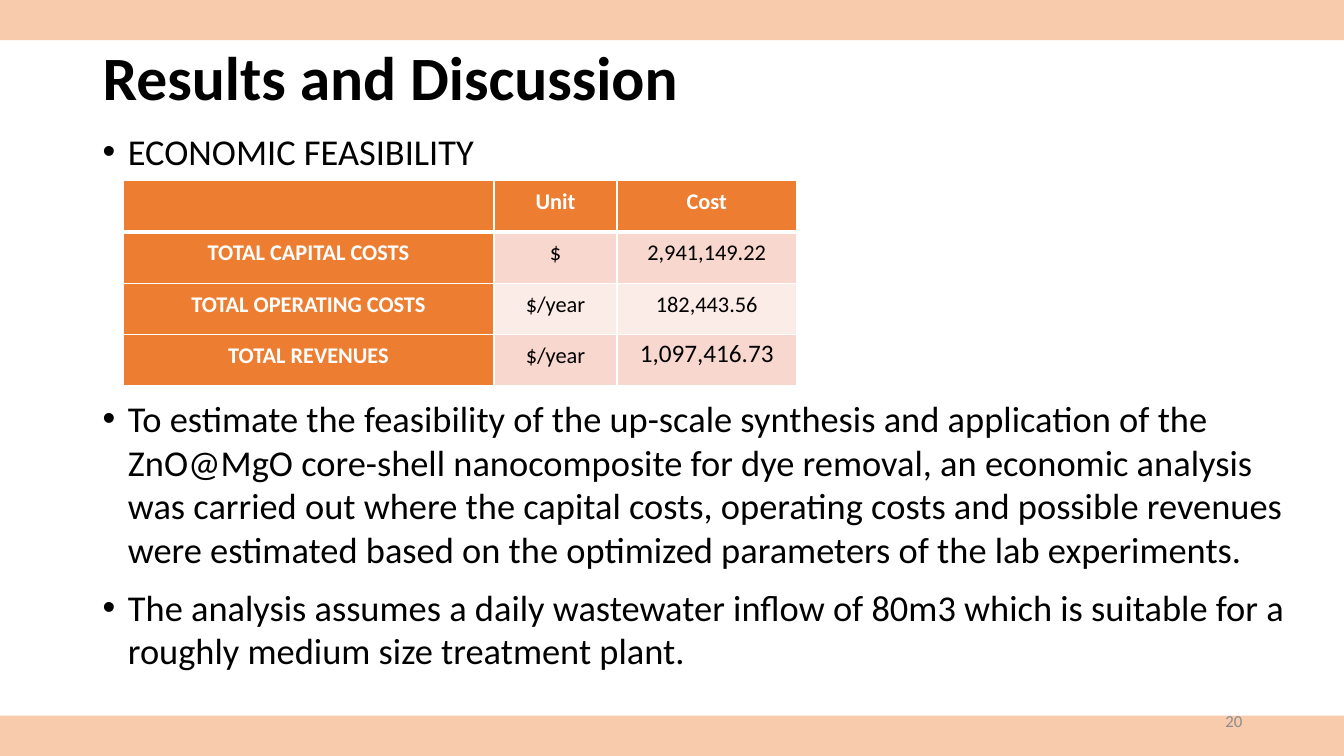
from lxml.etree import SubElement
from pptx import Presentation
from pptx.dml.color import RGBColor
from pptx.enum.shapes import MSO_SHAPE
from pptx.enum.text import MSO_ANCHOR, PP_ALIGN
from pptx.oxml.ns import qn
from pptx.util import Inches, Pt

BLACK = RGBColor(0x00, 0x00, 0x00)
WHITE = RGBColor(0xFF, 0xFF, 0xFF)
GREY = RGBColor(0x8C, 0x8C, 0x8C)
PEACH = RGBColor(0xF8, 0xCB, 0xAD)
ORANGE = RGBColor(0xED, 0x7D, 0x31)
ROW_TINTS = [RGBColor(0xF8, 0xD7, 0xCE), RGBColor(0xFC, 0xEC, 0xE8)]

COSTS = [
    ["", "Unit", "Cost"],
    ["TOTAL CAPITAL COSTS", "$", "2,941,149.22"],
    ["TOTAL OPERATING COSTS", "$/year", "182,443.56"],
    ["TOTAL REVENUES", "$/year", "1,097,416.73"],
]
COLUMN_WIDTHS = [3.68, 1.22, 1.78]
ROW_HEIGHT = 0.51
REVENUE_CELL = (3, 2)

FINDINGS = [
    "To estimate the feasibility of the up-scale synthesis and application of the "
    "ZnO@MgO core-shell nanocomposite for dye removal, an economic analysis was "
    "carried out where the capital costs, operating costs and possible revenues "
    "were estimated based on the optimized parameters of the lab experiments.",
    "The analysis assumes a daily wastewater inflow of 80m3 which is suitable for "
    "a roughly medium size treatment plant.",
]


def set_attributes(target, values):
    for name, value in values.items():
        setattr(target, name, value)


def write_text(paragraph, text, size, color=BLACK, bold=False, **layout):
    set_attributes(paragraph, layout)
    set_attributes(paragraph.font, {"name": "Calibri", "size": Pt(size), "bold": bold})
    paragraph.font.color.rgb = color
    if text:
        run = paragraph.add_run()
        run.text = text
        set_attributes(run.font, {"name": "Calibri", "size": Pt(size), "bold": bold})
        run.font.color.rgb = color


def add_band(slide, top):
    band = slide.shapes.add_shape(
        MSO_SHAPE.RECTANGLE, 0, Inches(top), Inches(13.33), Inches(0.4))
    band.shadow.inherit = False
    band.fill.solid()
    band.fill.fore_color.rgb = PEACH
    band.line.fill.background()


def add_text_frame(slide, left, top, width, height, anchor):
    box = slide.shapes.add_textbox(
        Inches(left), Inches(top), Inches(width), Inches(height))
    set_attributes(box.text_frame, {"word_wrap": True, "vertical_anchor": anchor})
    return box.text_frame


def add_bullets(slide, left, top, width, height, texts):
    frame = add_text_frame(slide, left, top, width, height, MSO_ANCHOR.TOP)
    for index, text in enumerate(texts):
        paragraph = frame.add_paragraph() if index else frame.paragraphs[0]
        write_text(paragraph, text, 26, space_before=Pt(10))
        properties = paragraph._p.get_or_add_pPr()
        properties.set("marL", str(Inches(0.25)))
        properties.set("indent", str(Inches(-0.25)))
        SubElement(properties, qn("a:buFont"), typeface="Arial")
        SubElement(properties, qn("a:buChar"), char="•")


def set_borders(cell, widths):
    properties = cell._tc.get_or_add_tcPr()
    for side, width in widths.items():
        line = SubElement(properties, qn(f"a:ln{side}"), w=str(Pt(width)))
        fill = SubElement(line, qn("a:solidFill"))
        SubElement(fill, qn("a:srgbClr"), val=str(WHITE))


def format_cell(cell, row, column, text):
    heading = row == 0 or column == 0
    # The rule under the header row is thicker
    set_borders(cell, {"L": 1, "R": 1, "T": 3 if row == 1 else 1,
                       "B": 3 if row == 0 else 1})
    cell.fill.solid()
    cell.fill.fore_color.rgb = ORANGE if heading else ROW_TINTS[(row - 1) % 2]
    set_attributes(cell, {
        "vertical_anchor": MSO_ANCHOR.MIDDLE,
        "margin_left": Inches(0.06), "margin_right": Inches(0.06),
        "margin_top": 0, "margin_bottom": 0,
    })
    write_text(cell.text_frame.paragraphs[0], text,
               18 if (row, column) == REVENUE_CELL else 16,
               WHITE if heading else BLACK, heading,
               alignment=PP_ALIGN.CENTER, line_spacing=Pt(13))


def add_cost_table(slide, left, top):
    table = slide.shapes.add_table(
        len(COSTS), len(COLUMN_WIDTHS), Inches(left), Inches(top),
        Inches(sum(COLUMN_WIDTHS)), Inches(ROW_HEIGHT * len(COSTS))).table
    for column, width in zip(table.columns, COLUMN_WIDTHS):
        column.width = Inches(width)
    for row, texts in enumerate(COSTS):
        table.rows[row].height = Inches(ROW_HEIGHT)
        for column, text in enumerate(texts):
            format_cell(table.cell(row, column), row, column, text)


def main():
    presentation = Presentation()
    presentation.slide_width = Inches(13.33)
    presentation.slide_height = Inches(7.5)
    slide = presentation.slides.add_slide(presentation.slide_layouts[6])

    # Title
    title = add_text_frame(slide, 0.92, 0.34, 11.5, 0.92, MSO_ANCHOR.MIDDLE)
    write_text(title.paragraphs[0], "Results and Discussion", 44, bold=True,
               line_spacing=0.9)

    # Bands and slide number
    for top in (7.1, 0):
        add_band(slide, top)
    number = add_text_frame(slide, 9.42, 6.95, 3, 0.4, MSO_ANCHOR.MIDDLE)
    write_text(number.paragraphs[0], "20", 12, GREY, alignment=PP_ALIGN.RIGHT)

    # Cost summary and findings
    add_bullets(slide, 0.92, 1.23, 12, 6.27, ["ECONOMIC FEASIBILITY"])
    add_cost_table(slide, 1.22, 1.79)
    add_bullets(slide, 0.92, 3.88, 12.25, 3.58, FINDINGS)

    presentation.save("out.pptx")


if __name__ == "__main__":
    main()
